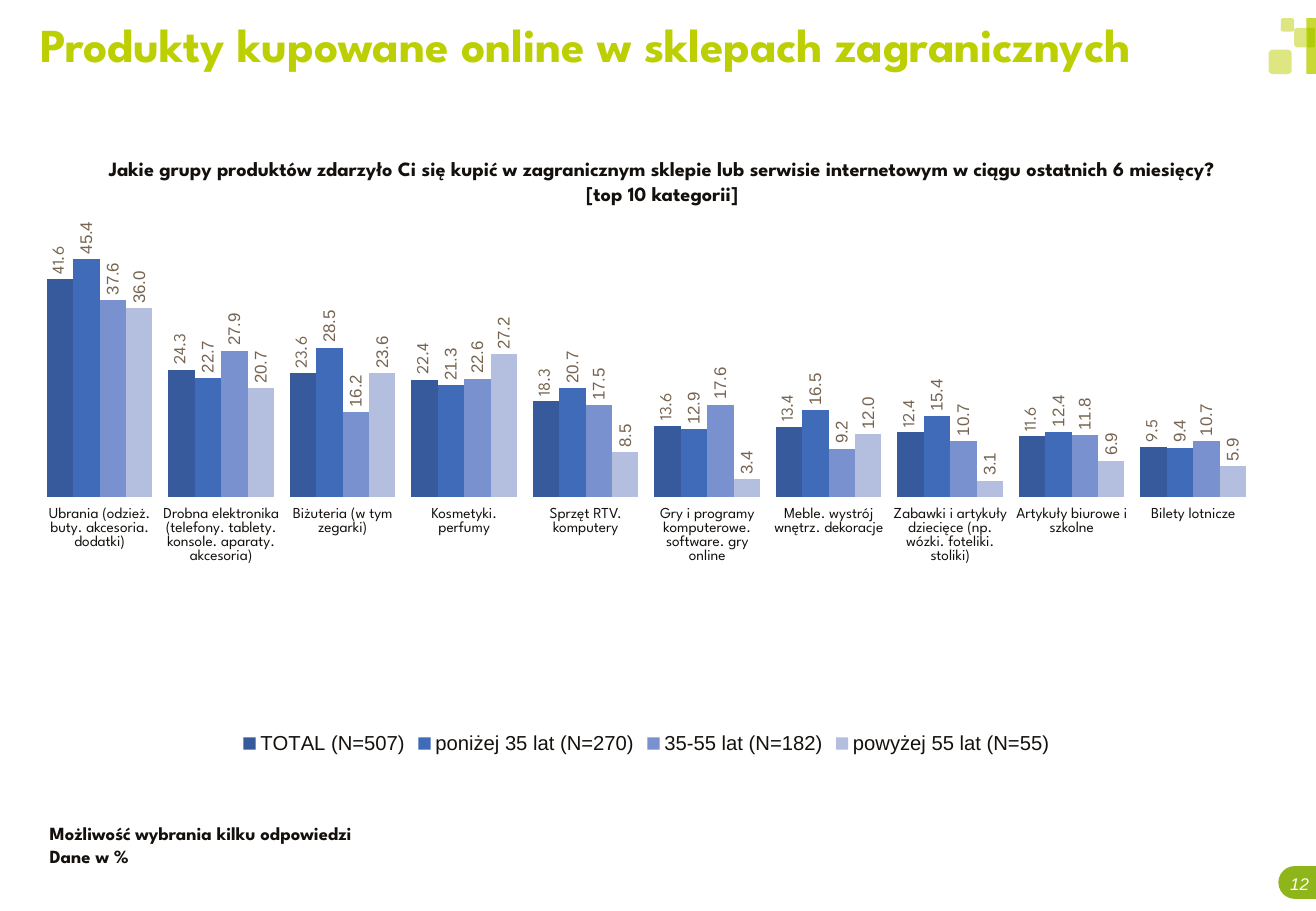
from dataclasses import dataclass

from lxml.etree import SubElement
from pptx import Presentation
from pptx.chart.data import CategoryChartData
from pptx.dml.color import RGBColor
from pptx.enum.chart import XL_CHART_TYPE, XL_LABEL_POSITION, XL_LEGEND_POSITION
from pptx.enum.shapes import MSO_SHAPE
from pptx.enum.text import MSO_ANCHOR, PP_ALIGN
from pptx.oxml import parse_xml
from pptx.oxml.ns import nsdecls, qn
from pptx.util import Inches, Pt

TITLE = "Produkty kupowane online w sklepach zagranicznych"
QUESTION = ("Jakie grupy produktów zdarzyło Ci się kupić w zagranicznym sklepie lub serwisie "
            "internetowym w ciągu ostatnich 6 miesięcy? [top 10 kategorii]")
FOOTNOTES = ["Możliwość wybrania kilku odpowiedzi", "Dane w %"]
PAGE = "12"

CATEGORIES = [
    "Ubrania (odzież. buty. akcesoria. dodatki)",
    "Drobna elektronika (telefony. tablety. konsole. aparaty. akcesoria)",
    "Biżuteria (w tym zegarki)",
    "Kosmetyki. perfumy",
    "Sprzęt RTV. komputery",
    "Gry i programy komputerowe. software. gry online",
    "Meble. wystrój wnętrz. dekoracje",
    "Zabawki i artykuły dziecięce (np. wózki. foteliki. stoliki)",
    "Artykuły biurowe i szkolne",
    "Bilety lotnicze",
]


@dataclass(frozen=True)
class Theme:
    heading: str = "League Spartan"
    body: str = "Arial"
    lime: str = "BCCF03"
    green: str = "7CBB26"
    badge: str = "8EB519"
    ink: str = "13100D"
    label: str = "766451"
    white: str = "FFFFFF"
    title_size: float = 28
    question_size: float = 12
    note_size: float = 11
    category_size: float = 9
    legend_size: float = 12
    small_size: float = 10


T = Theme()

# name, values, fill, label font, label number format
SERIES = [
    ("TOTAL (N=507)", [41.6, 24.3, 23.6, 22.4, 18.3, 13.6, 13.4, 12.4, 11.6, 9.5],
     "365A9B", T.heading, "###0.0"),
    ("poniżej 35 lat (N=270)", [45.4, 22.7, 28.5, 21.3, 20.7, 12.9, 16.5, 15.4, 12.4, 9.4],
     "406BB8", T.body, "###0.0"),
    ("35-55 lat (N=182)", [37.6, 27.9, 16.2, 22.6, 17.5, 17.6, 9.2, 10.7, 11.8, 10.7],
     "7991CE", T.body, "0.0"),
    ("powyżej 55 lat (N=55)", [36, 20.7, 23.6, 27.2, 8.5, 3.4, 12, 3.1, 6.9, 5.9],
     "B4BEDF", T.body, "0.0"),
]

# preset, box, rotation, fill, opacity in percent, corner adjustments
ORNAMENTS = [
    (MSO_SHAPE.ROUND_2_SAME_RECTANGLE, (10.54, 7.11, 0.27, 0.31), 270, T.badge, 100, (0.5, 0)),
    (MSO_SHAPE.ROUNDED_RECTANGLE, (10.44, 0.41, 0.19, 0.2), 0, T.lime, 50, ()),
    (MSO_SHAPE.ROUNDED_RECTANGLE, (10.65, 0.23, 0.15, 0.16), 0, T.lime, 50, ()),
    (MSO_SHAPE.ROUNDED_RECTANGLE, (10.54, 0.15, 0.11, 0.11), 0, T.lime, 50, ()),
    (MSO_SHAPE.ROUND_2_SAME_RECTANGLE, (10.71, 0.28, 0.16, 0.06), 90, T.green, 100, ()),
    (MSO_SHAPE.RECTANGLE, (10.75, 0.15, 0.08, 0.46), 0, T.lime, 80, ()),
]

CHART_BOX = (0.32, 1.81, 10, 4.44)
TABLE_BOX = (0.32, 4.17, 10, 1.06)
PLOT = {"x": 0, "y": 0.028, "w": 1, "h": 0.486}


def box(dims):
    return [Inches(d) for d in dims]


def style(font, name, size, color, bold=False, italic=False):
    font.name, font.size = name, Pt(size)
    font.bold, font.italic = bold, italic
    font.color.rgb = RGBColor.from_string(color)


def fill_frame(tf, lines, font, align):
    """Write one styled paragraph per line; font holds the arguments of style()."""
    tf.word_wrap = True
    for i, line in enumerate(lines):
        p = tf.paragraphs[0] if i == 0 else tf.add_paragraph()
        p.alignment = align
        r = p.add_run()
        r.text = line
        style(r.font, *font)


def add_text(s, dims, lines, font, insets=(0.1, 0.05, 0.1, 0.05), align=PP_ALIGN.LEFT):
    tf = s.shapes.add_textbox(*box(dims)).text_frame
    tf.margin_left, tf.margin_top, tf.margin_right, tf.margin_bottom = box(insets)
    fill_frame(tf, lines, font, align)
    return tf


def add_ornament(s, preset, dims, rotation, color, opacity, adjustments):
    sp = s.shapes.add_shape(preset, *box(dims))
    sp.rotation = rotation
    sp.shadow.inherit = False
    sp.line.fill.background()
    sp.fill.solid()
    sp.fill.fore_color.rgb = RGBColor.from_string(color)
    for i, value in enumerate(adjustments):
        sp.adjustments[i] = value
    if opacity < 100:
        clr = sp.fill._xPr.find(".//" + qn("a:srgbClr"))
        SubElement(clr, qn("a:alpha")).set("val", str(opacity * 1000))


def set_plot_area(chart):
    """Pin the inner plot area to the fractions in PLOT."""
    area = chart._chartSpace.chart.plotArea
    for old in area.findall(qn("c:layout")):
        area.remove(old)
    sizes = "".join(f'<c:{k} val="{v}"/>' for k, v in PLOT.items())
    area.insert(0, parse_xml(
        f'<c:layout {nsdecls("c")}><c:manualLayout><c:layoutTarget val="inner"/>'
        f'<c:xMode val="edge"/><c:yMode val="edge"/>{sizes}</c:manualLayout></c:layout>'))


def add_bars(s):
    data = CategoryChartData()
    data.categories = [str(i + 1) for i in range(len(CATEGORIES))]
    for name, values, _, _, fmt in SERIES:
        data.add_series(name, values, fmt)
    chart = s.shapes.add_chart(XL_CHART_TYPE.COLUMN_CLUSTERED, *box(CHART_BOX), data).chart
    chart.has_title = False
    style(chart.font, T.body, T.small_size, T.ink)
    chart.has_legend = True
    chart.legend.position = XL_LEGEND_POSITION.BOTTOM
    chart.legend.include_in_layout = False
    style(chart.legend.font, T.body, T.legend_size, T.ink)
    axis = chart.value_axis
    axis.minimum_scale, axis.maximum_scale = 0, 50
    axis.has_major_gridlines = False
    axis.tick_labels.number_format = "###0.0"
    axis.tick_labels.number_format_is_linked = False
    axis.visible = chart.category_axis.visible = False
    plot = chart.plots[0]
    plot.gap_width, plot.overlap, plot.vary_by_categories = 60, 0, False
    for series, (_, _, color, font, fmt) in zip(plot.series, SERIES):
        series.format.fill.solid()
        series.format.fill.fore_color.rgb = RGBColor.from_string(color)
        labels = series.data_labels
        labels.show_value = True
        labels.position = XL_LABEL_POSITION.OUTSIDE_END
        labels.number_format, labels.number_format_is_linked = fmt, False
        style(labels.font, font, T.small_size, T.label)
        turn = labels._element.find(".//" + qn("a:bodyPr"))
        turn.set("rot", "-5400000")
        turn.set("vert", "horz")
    set_plot_area(chart)


def add_category_names(s):
    table = s.shapes.add_table(1, len(CATEGORIES), *box(TABLE_BOX)).table
    table.first_row = table.horz_banding = False
    for cell, name in zip(table.rows[0].cells, CATEGORIES):
        cell.fill.background()
        cell.vertical_anchor = MSO_ANCHOR.TOP
        cell.margin_left = cell.margin_top = cell.margin_right = Inches(0.01)
        cell.margin_bottom = 0
        fill_frame(cell.text_frame, [name], (T.heading, T.category_size, T.ink),
                   PP_ALIGN.CENTER)


def main():
    prs = Presentation()
    prs.slide_width, prs.slide_height = Inches(10.83), Inches(7.5)
    s = prs.slides.add_slide(prs.slide_layouts[6])
    for ornament in ORNAMENTS:
        add_ornament(s, *ornament)
    page = add_text(s, (10.61, 7.19, 0.17, 0.17), [PAGE],
                    (T.body, T.small_size, T.white, False, True), (0, 0, 0, 0), PP_ALIGN.CENTER)
    page.word_wrap = False
    add_text(s, (0.33, 0.08, 10.25, 0.85), [TITLE],
             (T.heading, T.title_size, T.lime, True), (0, 0.05, 0, 0.05))
    add_text(s, (0.71, 1.24, 9.48, 0.5), [QUESTION],
             (T.heading, T.question_size, T.ink, True), align=PP_ALIGN.CENTER)
    add_text(s, (0.31, 6.72, 7.64, 0.47), FOOTNOTES, (T.heading, T.note_size, T.ink, True))
    add_bars(s)
    add_category_names(s)
    prs.save("out.pptx")


if __name__ == "__main__":
    main()
